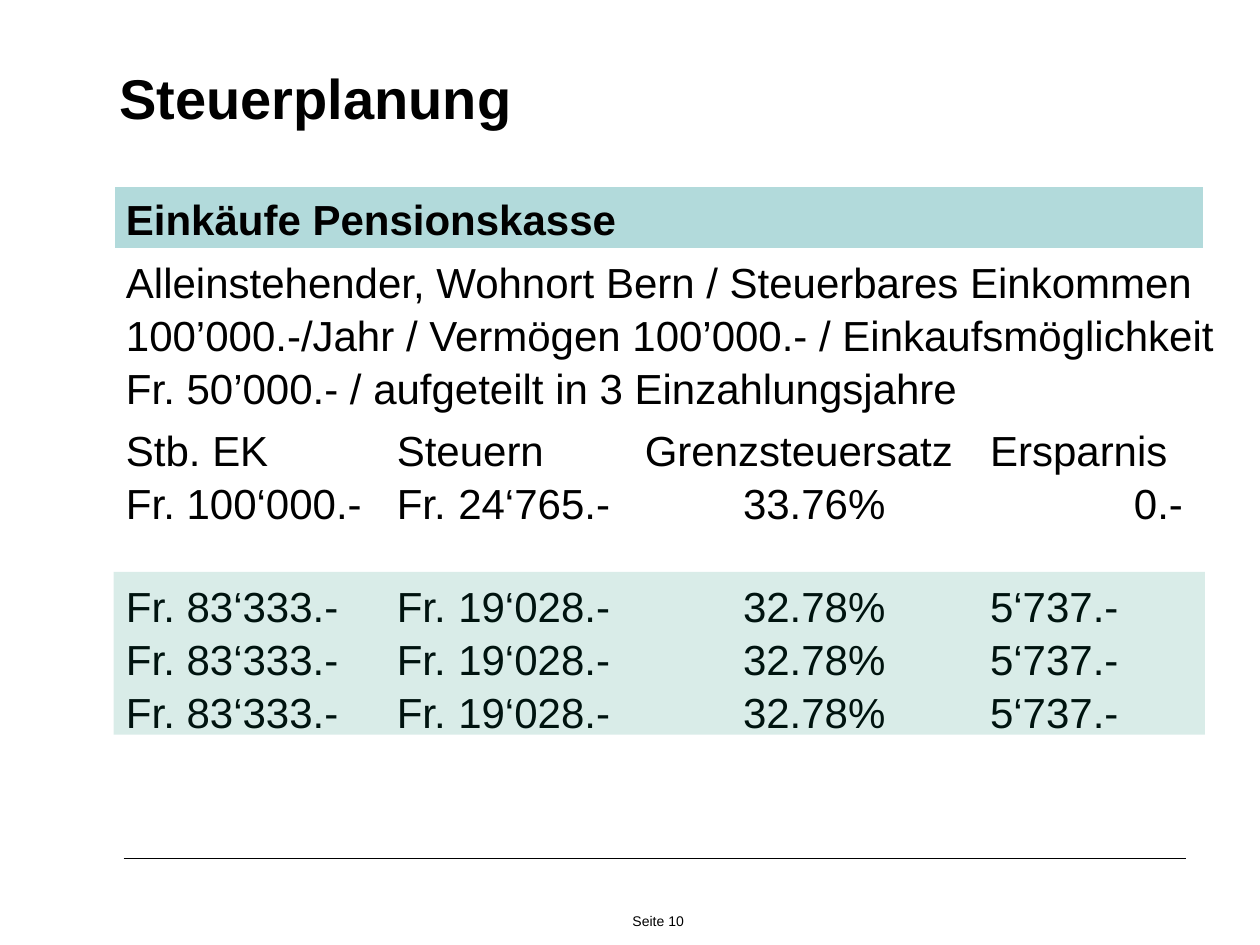
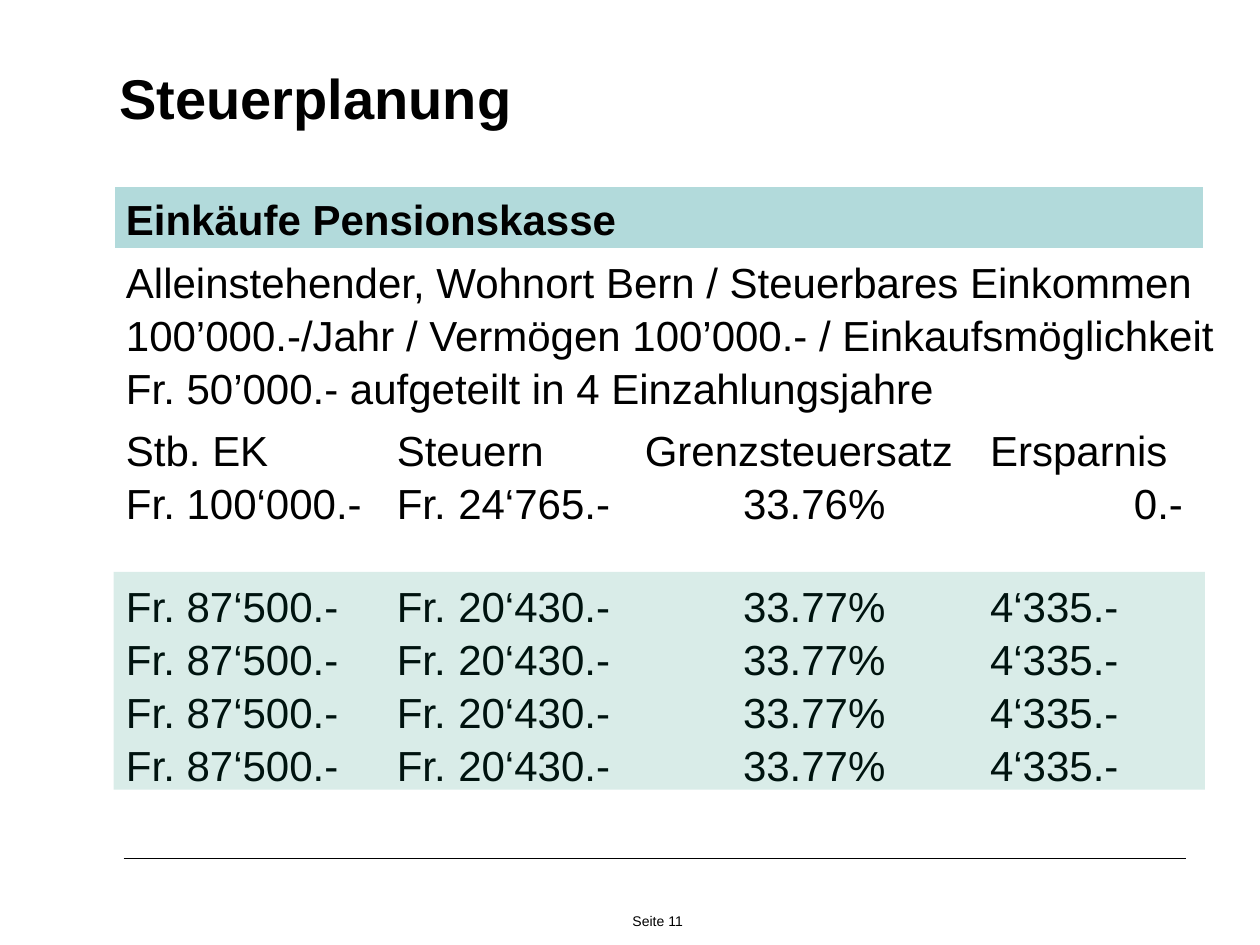
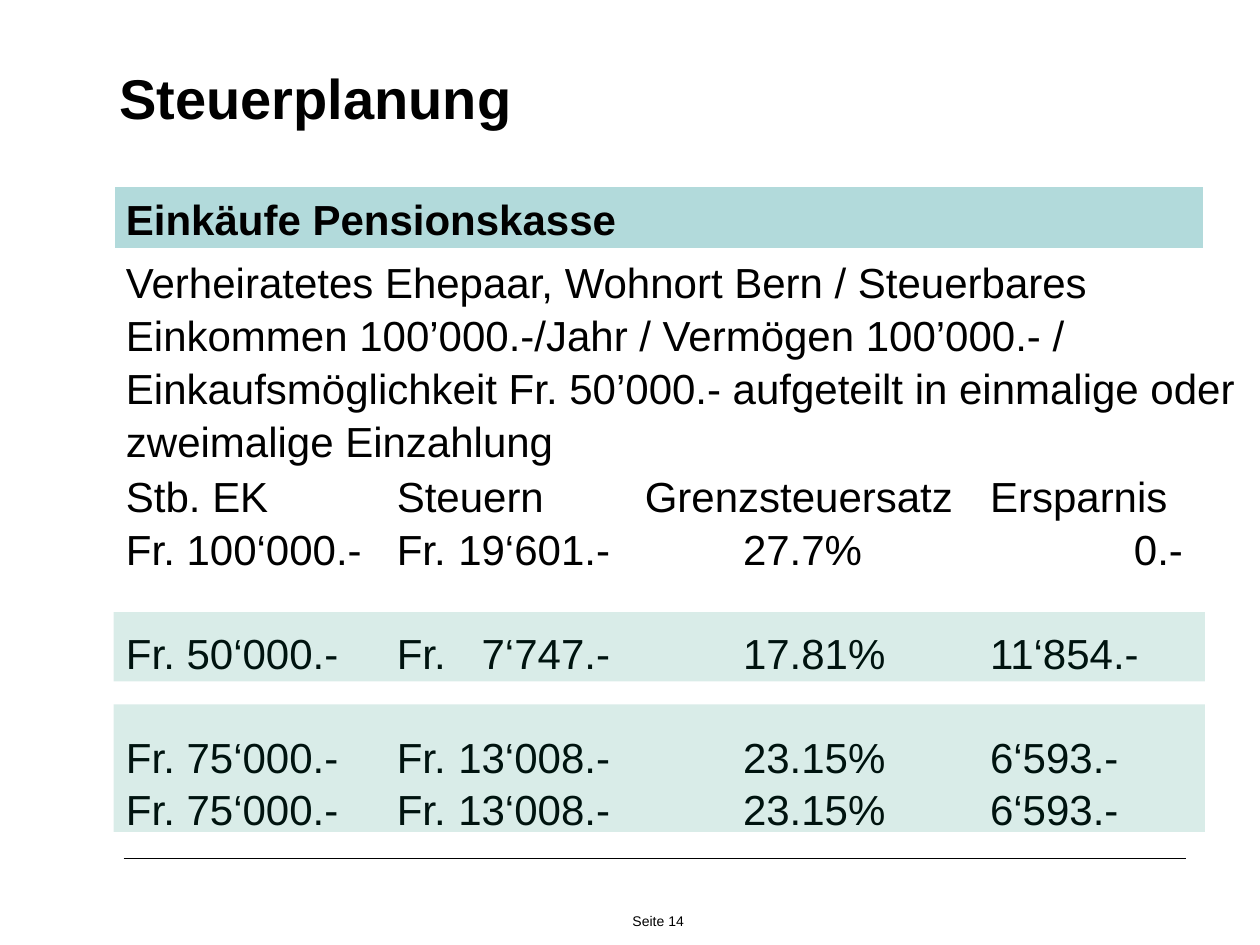
from dataclasses import dataclass

from lxml import etree
from pptx import Presentation
from pptx import util as u
from pptx.dml.color import RGBColor
from pptx.enum import shapes, text
from pptx.oxml.ns import qn


@dataclass(frozen=True)
class Theme:
    font: str = "Arial"
    ink: RGBColor = RGBColor(0, 0, 0)
    white: RGBColor = RGBColor(255, 255, 255)
    heading_fill: RGBColor = RGBColor(0xB2, 0xDA, 0xDB)
    highlight: RGBColor = RGBColor(0x00, 0x83, 0x6A)
    highlight_opacity: int = 15
    title_size: int = 32
    body_size: int = 24
    footer_size: int = 8
    line_spacing: float = 1.05


@dataclass(frozen=True)
class Box:
    """Position and size in centimetres."""
    left: float
    top: float
    width: float
    height: float

    def lengths(self):
        return [u.Cm(v) for v in (self.left, self.top, self.width, self.height)]


@dataclass(frozen=True)
class Group:
    """Equal yearly payments on one highlight, measured from the table's top."""
    income: str
    tax: str
    rate: str
    saving: str
    years: int
    top: float
    height: float


@dataclass(frozen=True)
class Case:
    page: int
    situation: str
    base_tax: str
    base_rate: str
    table_top: float
    groups: tuple


THEME = Theme()
MARGIN, CONTENT_WIDTH = 2.29, 22.0
SLIDE_WIDTH, SLIDE_HEIGHT = 25.4, 19.05

TITLE_BOX = Box(2.41, 1.22, 21.59, 4.09)
HEADING_BOX = Box(MARGIN, 3.73, CONTENT_WIDTH, 1.3)
SITUATION_BOX = Box(MARGIN, 5.0, SLIDE_WIDTH - MARGIN, 6.83)
FOOTER_BOX = Box(2.49, 17.3, 21.41, 1.75)

TAX_STOP, TAX_END, RATE_STOP, SAVING_STOP = (5.46, "l"), (9.76, "r"), (12.44, "l"), (17.42, "l")
HEADER_STOPS = (TAX_STOP, (10.46, "l"), SAVING_STOP)
BASE_STOPS = (TAX_STOP, TAX_END, RATE_STOP, (20.32, "l"))
PAYMENT_STOPS = (TAX_STOP, TAX_END, RATE_STOP, SAVING_STOP)

SINGLE = ("Alleinstehender, Wohnort Bern / Steuerbares Einkommen 100’000.-/Jahr / "
          "Vermögen 100’000.- / Einkaufsmöglichkeit Fr. 50’000.- ")
COUPLE = ("Verheiratetes Ehepaar, Wohnort Bern / Steuerbares Einkommen 100’000.-/Jahr / "
          "Vermögen 100’000.- / Einkaufsmöglichkeit Fr. 50’000.- "
          "aufgeteilt in einmalige oder zweimalige Einzahlung")

CASES = (
    Case(10, SINGLE + "/ aufgeteilt in 3 Einzahlungsjahre", "24‘765.-", "33.76%", 8.38,
         (Group("83‘333.-", "19‘028.-", "32.78%", "5‘737.-", 3, 3.15, 3.28),)),
    Case(11, SINGLE + "aufgeteilt in 4 Einzahlungsjahre", "24‘765.-", "33.76%", 8.38,
         (Group("87‘500.-", "20‘430.-", "33.77%", "4‘335.-", 4, 3.15, 4.39),)),
    Case(14, COUPLE, "19‘601.-", "27.7%", 9.32,
         (Group("50‘000.-", "7‘747.-", "17.81%", "11‘854.-", 1, 3.02, 1.4),
          Group("75‘000.-", "13‘008.-", "23.15%", "6‘593.-", 2, 4.88, 2.57))),
)


def set_tab_stops(paragraph, stops):
    tab_list = etree.SubElement(paragraph._p.get_or_add_pPr(), qn("a:tabLst"))
    for position, alignment in stops:
        etree.SubElement(tab_list, qn("a:tab"), pos=str(u.Cm(position)), algn=alignment)


def style(paragraph, size, bold=False):
    paragraph.alignment = text.PP_ALIGN.LEFT
    paragraph.line_spacing = THEME.line_spacing
    paragraph.font.name = THEME.font
    paragraph.font.size = u.Pt(size)
    paragraph.font.bold = bold
    paragraph.font.color.rgb = THEME.ink


def add_text(slide, box, words, size, bold=False):
    frame = slide.shapes.add_textbox(*box.lengths()).text_frame
    frame.word_wrap = True
    frame.text = words
    style(frame.paragraphs[0], size, bold)
    return frame


def add_rectangle(slide, box, color):
    rectangle = slide.shapes.add_shape(shapes.MSO_SHAPE.RECTANGLE, *box.lengths())
    rectangle.shadow.inherit = False
    rectangle.fill.solid()
    rectangle.fill.fore_color.rgb = color
    rectangle.line.fill.background()
    return rectangle


def add_title(slide, box):
    frame = add_text(slide, box, "Steuerplanung", THEME.title_size, bold=True)
    frame.margin_left = frame.margin_top = frame.margin_right = frame.margin_bottom = 0


def add_heading(slide, box):
    band = add_rectangle(slide, box, THEME.heading_fill)
    band.line.color.rgb = THEME.white
    band.line.width = u.Pt(2)
    band.text_frame.text = "Einkäufe Pensionskasse"
    style(band.text_frame.paragraphs[0], THEME.body_size, bold=True)


def add_highlight(slide, box):
    highlight = add_rectangle(slide, box, THEME.highlight)
    color = highlight._element.spPr.find(qn("a:solidFill"))[0]
    etree.SubElement(color, qn("a:alpha"), val=str(THEME.highlight_opacity * 1000))


def add_tax_table(slide, box, case):
    """Tabbed rows: headings, the tax without payments, then each payment group."""
    rows = [("Stb. EK\tSteuern\tGrenzsteuersatz\tErsparnis", HEADER_STOPS, False),
            (f"Fr. 100‘000.-\tFr.\t{case.base_tax}\t{case.base_rate}\t0.-", BASE_STOPS, False)]
    for group in case.groups:
        row = f"Fr. {group.income}\tFr.\t{group.tax}\t{group.rate}\t{group.saving}"
        rows += [(row, PAYMENT_STOPS, year == 0) for year in range(group.years)]

    frame = slide.shapes.add_textbox(*box.lengths()).text_frame
    frame.word_wrap = True
    for index, (words, stops, starts_group) in enumerate(rows):
        paragraph = frame.add_paragraph() if index else frame.paragraphs[0]
        paragraph.text = words
        set_tab_stops(paragraph, stops)
        style(paragraph, THEME.body_size)
        if starts_group:
            paragraph.space_before = u.Pt(29)

    for group in case.groups:
        add_highlight(slide, Box(box.left, box.top + group.top, box.width, group.height))


def add_footer(slide, box, page):
    rule = slide.shapes.add_connector(
        shapes.MSO_CONNECTOR.STRAIGHT, u.Cm(box.left), u.Cm(box.top),
        u.Cm(box.left + box.width), u.Cm(box.top))
    rule.line.color.rgb = THEME.ink
    rule.line.width = u.Pt(0.3)
    etree.SubElement(rule._element.spPr, qn("a:effectLst"))
    page_box = Box(box.left + 10.01, box.top + 0.96, 1.9, 0.79)
    add_text(slide, page_box, f"Seite {page}", THEME.footer_size)


def add_case_slide(deck, case):
    slide = deck.slides.add_slide(deck.slide_layouts[6])
    add_title(slide, TITLE_BOX)
    add_heading(slide, HEADING_BOX)
    add_text(slide, SITUATION_BOX, case.situation, THEME.body_size)
    line_count = 3 + sum(group.years + 1 for group in case.groups)
    table_height = 0.25 + 1.03 * (line_count - 1)
    add_tax_table(slide, Box(MARGIN, case.table_top, CONTENT_WIDTH, table_height), case)
    add_footer(slide, FOOTER_BOX, case.page)


def main():
    deck = Presentation()
    deck.slide_width, deck.slide_height = u.Cm(SLIDE_WIDTH), u.Cm(SLIDE_HEIGHT)
    for case in CASES:
        add_case_slide(deck, case)
    deck.save("out.pptx")


if __name__ == "__main__":
    main()
